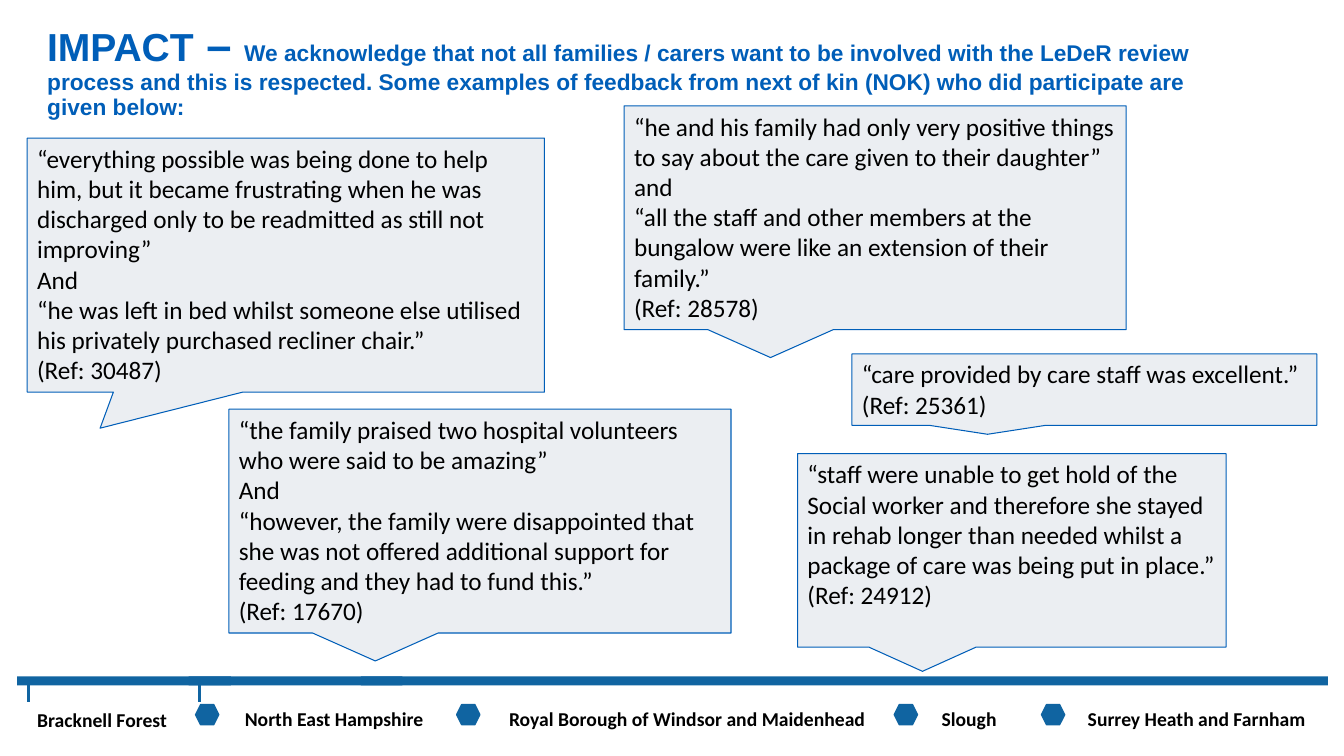
from dataclasses import dataclass

from lxml.etree import SubElement
from pptx import Presentation
from pptx.dml.color import RGBColor
from pptx.enum.shapes import MSO_CONNECTOR, MSO_SHAPE
from pptx.enum.text import MSO_ANCHOR, MSO_AUTO_SIZE, PP_ALIGN
from pptx.oxml.ns import qn
from pptx.util import Inches, Pt

BLUE = "005EB8"
BAR_BLUE = "1064A1"
PALE = "EBEEF2"
BLACK = "000000"


@dataclass
class Quote:
    left: float
    top: float
    width: float
    height: float
    paragraphs: list[str]
    tip: tuple[float, float] = (-0.2083, 0.625)


@dataclass
class Place:
    name: str
    left: float
    width: float
    top: float = 6.95
    height: float = 0.29


QUOTES = [
    Quote(0.27, 1.37, 5.13, 2.52, [
        "“everything possible was being done to help him, but it became frustrating "
        "when he was discharged only to be readmitted as still not improving”",
        "And",
        "“he was left in bed whilst someone else utilised his privately purchased "
        "recliner chair.” \n(Ref: 30487)",
    ], (-0.359, 0.642)),
    Quote(6.19, 1.05, 4.98, 2.22, [
        "“he and his family had only very positive things to say about the care "
        "given to their daughter” and",
        "“all the staff and other members at the bungalow were like an extension "
        "of their family.”",
        "(Ref: 28578)",
    ]),
    Quote(7.91, 4.5, 4.25, 1.92, [
        "“staff were unable to get hold of the Social worker and therefore she stayed "
        "in rehab longer than needed whilst a package of care was being put in place.”",
        "(Ref: 24912)",
    ]),
    Quote(8.45, 3.51, 4.61, 0.71, [
        "“care provided by care staff was excellent.” \n(Ref: 25361)",
    ]),
    Quote(2.27, 4.06, 4.98, 2.22, [
        "“the family praised two hospital volunteers who were said to be amazing”",
        "And",
        "“however, the family were disappointed that she was not offered additional "
        "support for feeding and they had to fund this.”",
        "(Ref: 17670)",
    ]),
]

PLACES = [
    Place("Bracknell Forest", 0.27, 1.51, 6.96, 0.26),
    Place("North East Hampshire", 2.33, 2),
    Place("Royal Borough of Windsor and Maidenhead", 4.95, 3.79),
    Place("Slough", 9.24, 0.96),
    Place("Surrey Heath and Farnham", 10.69, 2.37),
]

BAR_PIECES = [(3.58, 9.59), (1.87, 2.12), (0.17, 2.12)]
TICKS = [0.28, 1.98]
SEPARATORS = [1.94, 4.53, 8.87, 10.33]

TITLE = [
    ("IMPACT", 27.9),
    (" – ", 32.4),
    ("We acknowledge that not all families / carers want to be involved with the "
     "LeDeR review ", 16.2),
    ("process and this is respected. Some examples of feedback from next of kin (NOK) "
     "who did participate are given below:", 16.2),
]


def rgb(value: str) -> RGBColor:
    return RGBColor.from_string(value)


def set_font(font, name: str, size: float, color: str, bold: bool = False) -> None:
    font.name = name
    font.size = Pt(size)
    font.bold = bold
    font.color.rgb = rgb(color)


def add_filled(slide, kind, left: float, top: float, width: float, height: float,
               fill: str, line: str = "", line_width: float = 1):
    shape = slide.shapes.add_shape(kind, Inches(left), Inches(top),
                                   Inches(width), Inches(height))
    shape.shadow.inherit = False
    shape.fill.solid()
    shape.fill.fore_color.rgb = rgb(fill)
    if line:
        shape.line.color.rgb = rgb(line)
        shape.line.width = Pt(line_width)
    else:
        shape.line.fill.background()
    return shape


def add_quote(slide, quote: Quote) -> None:
    bubble = add_filled(slide, MSO_SHAPE.RECTANGULAR_CALLOUT, quote.left, quote.top,
                        quote.width, quote.height, PALE, BLUE, 0.75)
    bubble.adjustments[0], bubble.adjustments[1] = quote.tip
    frame = bubble.text_frame
    frame.word_wrap = True
    frame.vertical_anchor = MSO_ANCHOR.TOP
    for index, text in enumerate(quote.paragraphs):
        paragraph = frame.add_paragraph() if index else frame.paragraphs[0]
        paragraph.text = text.replace("\n", "\v")
        paragraph.alignment = PP_ALIGN.LEFT
        set_font(paragraph.font, "Calibri", 18, BLACK)


def add_place(slide, place: Place) -> None:
    label = slide.shapes.add_textbox(Inches(place.left), Inches(place.top),
                                     Inches(place.width), Inches(place.height))
    label.text_frame.word_wrap = True
    paragraph = label.text_frame.paragraphs[0]
    paragraph.text = place.name
    paragraph.line_spacing = 1.07
    paragraph.space_after = Pt(8)
    set_font(paragraph.font, "Calibri", 14, BLACK, True)


def add_tick(slide, x: float) -> None:
    tick = slide.shapes.add_connector(MSO_CONNECTOR.STRAIGHT, Inches(x), Inches(6.8),
                                      Inches(x), Inches(6.96))
    tick.line.color.rgb = rgb(BAR_BLUE)
    tick.line.width = Pt(2)
    SubElement(tick.element.spPr, qn("a:effectLst"))


def add_title(slide) -> None:
    heading = slide.shapes.add_textbox(Inches(0.37), Inches(0.17),
                                       Inches(11.64), Inches(1.07))
    frame = heading.text_frame
    frame.word_wrap = True
    frame.auto_size = MSO_AUTO_SIZE.NONE
    frame.vertical_anchor = MSO_ANCHOR.MIDDLE
    paragraph = frame.paragraphs[0]
    paragraph.line_spacing = 0.9
    for index, (text, size) in enumerate(TITLE):
        if index == len(TITLE) - 1:
            paragraph.add_line_break()
        run = paragraph.add_run()
        run.text = text
        set_font(run.font, "Arial", size, BLUE, True)


def main() -> None:
    deck = Presentation()
    deck.slide_width, deck.slide_height = Inches(13.33), Inches(7.5)
    slide = deck.slides.add_slide(deck.slide_layouts[6])

    # Footer band with the place names
    for left, width in BAR_PIECES:
        add_filled(slide, MSO_SHAPE.RECTANGLE, left, 6.71, width, 0.09, BAR_BLUE)
    for x in TICKS:
        add_tick(slide, x)
    for place in PLACES:
        add_place(slide, place)
    for left in SEPARATORS:
        add_filled(slide, MSO_SHAPE.HEXAGON, left, 6.99, 0.23, 0.2, BAR_BLUE, BAR_BLUE)

    # Heading and feedback
    add_title(slide)
    for quote in QUOTES:
        add_quote(slide, quote)

    deck.save("out.pptx")


if __name__ == "__main__":
    main()
